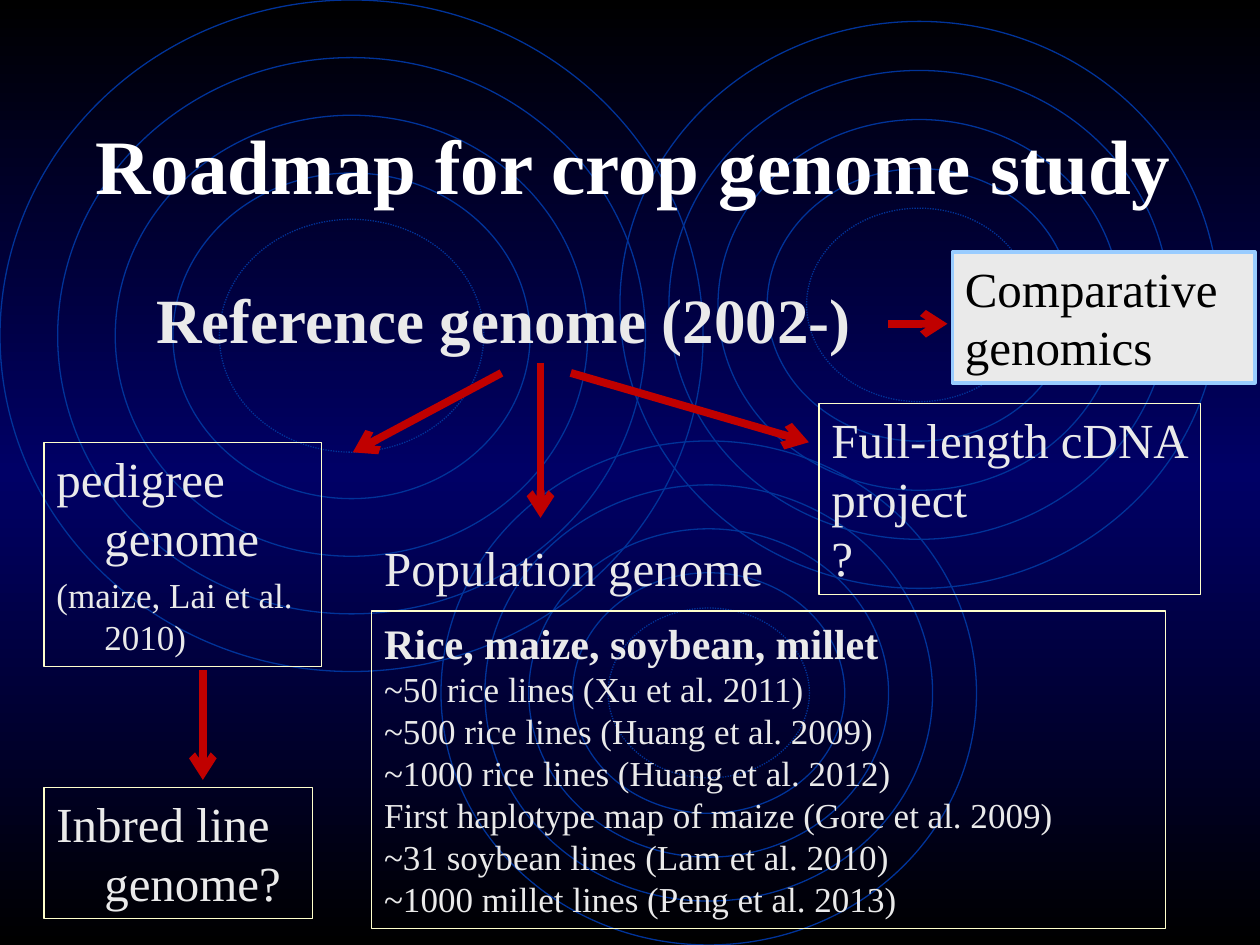
from lxml import etree
from pptx import Presentation
from pptx.dml.color import RGBColor
from pptx.enum import dml, shapes, text
from pptx.oxml.ns import qn
from pptx.util import Inches, Pt

BLACK = RGBColor(0x00, 0x00, 0x00)
WHITE = RGBColor(0xFF, 0xFF, 0xFF)
NAVY = RGBColor(0x00, 0x00, 0x66)
RING_BLUE = RGBColor(0x00, 0x33, 0x99)
PALE_GREY = RGBColor(0xEA, 0xEA, 0xEA)
CREAM = RGBColor(0xFF, 0xFF, 0xCC)
SKY_BLUE = RGBColor(0x99, 0xCC, 0xFF)
RED = RGBColor(0xC0, 0x00, 0x00)
FONT = "Times New Roman"

RING_SETS = [(0, 0, 5.58, 5.33), (3.5, 3.5, 4.25, 4), (4.92, 0.17, 4.75, 4.5)]
RING_INSETS = [0, 0.082, 0.164, 0.246, 0.312]

TITLE = ("Roadmap for crop genome study", 44, True)
REFERENCE = ("Reference genome (2002-)", 36, True)
PEDIGREE = [("pedigree genome", 28, False), ("(maize, Lai et al. 2010)", 20, False)]
INBRED = [("Inbred line genome?", 28, False)]
POPULATION = [("Population genome", 28, False)]
CDNA = [("Full-length cDNA project", 28, False), ("?", 28, False)]
COMPARATIVE = [("Comparative genomics", 28, False)]
STUDIES = [("Rice, maize, soybean, millet", 24, True)] + [
    (study, 20, False) for study in (
        "~50 rice lines (Xu et al. 2011)",
        "~500 rice lines (Huang et al. 2009)",
        "~1000 rice lines (Huang et al. 2012)",
        "First haplotype map of maize (Gore et al. 2009)",
        "~31 soybean lines (Lam et al. 2010)",
        "~1000 millet lines (Peng et al. 2013)",
    )
]
ARROWS = [
    (3.98, 2.96, 2.8, 3.59),
    (1.61, 5.32, 1.61, 6.19),
    (4.29, 2.88, 4.29, 4.11),
    (4.53, 2.96, 6.42, 3.51),
    (7.05, 2.57, 7.52, 2.57),
]


def paint_background(slide):
    fill = slide.background.fill
    fill.gradient()
    fill.gradient_angle = 270
    stops = fill._fill._gradFill.find(qn("a:gsLst"))
    for stop in list(stops):
        stops.remove(stop)
    for position, color in ((0, BLACK), (50000, NAVY), (100000, BLACK)):
        stop = etree.SubElement(stops, qn("a:gs"), pos=str(position))
        etree.SubElement(stop, qn("a:srgbClr"), val=str(color))


def add_rings(slide, left, top, width, height):
    for fraction in RING_INSETS:
        inset = width * fraction
        ring = slide.shapes.add_shape(
            shapes.MSO_SHAPE.OVAL, Inches(left + inset), Inches(top + inset),
            Inches(width - 2 * inset), Inches(height - 2 * inset))
        ring.shadow.inherit = False
        ring.fill.background()
        ring.line.color.rgb = RING_BLUE
        ring.line.width = Pt(0.75)
        if fraction == RING_INSETS[-1]:
            ring.line.dash_style = dml.MSO_LINE.ROUND_DOT


def write_text(frame, lines, color, hanging, align=text.PP_ALIGN.LEFT):
    for index, (words, size, bold) in enumerate(lines):
        paragraph = frame.paragraphs[0] if index == 0 else frame.add_paragraph()
        paragraph.text = words
        paragraph.alignment = align
        paragraph.font.name = FONT
        paragraph.font.size = Pt(size)
        paragraph.font.bold = bold
        paragraph.font.color.rgb = color
        if hanging:
            properties = paragraph._p.get_or_add_pPr()
            properties.set("marL", str(Inches(0.38)))
            properties.set("indent", str(Inches(-0.38)))
            paragraph.space_before = Pt(size * 0.2)


def add_text(slide, place, lines, color=PALE_GREY, hanging=False, wrap=True,
             align=text.PP_ALIGN.LEFT, anchor=text.MSO_ANCHOR.TOP):
    box = slide.shapes.add_textbox(*map(Inches, place))
    box.text_frame.word_wrap = wrap
    box.text_frame.vertical_anchor = anchor
    write_text(box.text_frame, lines, color, hanging, align)


def add_panel(slide, place, lines, hanging=False, color=PALE_GREY,
              fill=None, line=CREAM, line_width=0.75):
    panel = slide.shapes.add_shape(shapes.MSO_SHAPE.RECTANGLE, *map(Inches, place))
    panel.shadow.inherit = False
    if fill is None:
        panel.fill.background()
    else:
        panel.fill.solid()
        panel.fill.fore_color.rgb = fill
    panel.line.color.rgb = line
    panel.line.width = Pt(line_width)
    panel.text_frame.word_wrap = True
    panel.text_frame.vertical_anchor = text.MSO_ANCHOR.TOP
    write_text(panel.text_frame, lines, color, hanging)


def add_arrow(slide, ends):
    arrow = slide.shapes.add_connector(shapes.MSO_CONNECTOR.STRAIGHT, *map(Inches, ends))
    arrow.line.color.rgb = RED
    arrow.line.width = Pt(4.5)
    etree.SubElement(arrow.line._get_or_add_ln(), qn("a:tailEnd"), type="arrow")
    etree.SubElement(arrow._element.spPr, qn("a:effectLst"))


def main():
    presentation = Presentation()
    presentation.slide_width, presentation.slide_height = Inches(10), Inches(7.5)
    slide = presentation.slides.add_slide(presentation.slide_layouts[6])
    paint_background(slide)
    for ring_set in RING_SETS:
        add_rings(slide, *ring_set)
    add_text(slide, (0.24, 0.67, 9.57, 1.25), [TITLE], WHITE,
             align=text.PP_ALIGN.CENTER, anchor=text.MSO_ANCHOR.MIDDLE)
    add_text(slide, (1.14, 2.18, 6.22, 0.8), [REFERENCE], hanging=True)
    add_panel(slide, (0.35, 3.51, 2.2, 1.78), PEDIGREE, hanging=True)
    add_panel(slide, (0.35, 6.25, 2.13, 1.04), INBRED, hanging=True)
    add_panel(slide, (2.95, 4.85, 6.3, 2.52), STUDIES)
    add_text(slide, (2.95, 4.22, 3.24, 0.57), POPULATION, wrap=False)
    add_panel(slide, (6.5, 3.2, 3.03, 1.52), CDNA)
    add_panel(slide, (7.56, 2, 2.4, 1.04), COMPARATIVE, color=BLACK,
              fill=PALE_GREY, line=SKY_BLUE, line_width=2)
    for ends in ARROWS:
        add_arrow(slide, ends)
    presentation.save("out.pptx")


if __name__ == "__main__":
    main()
